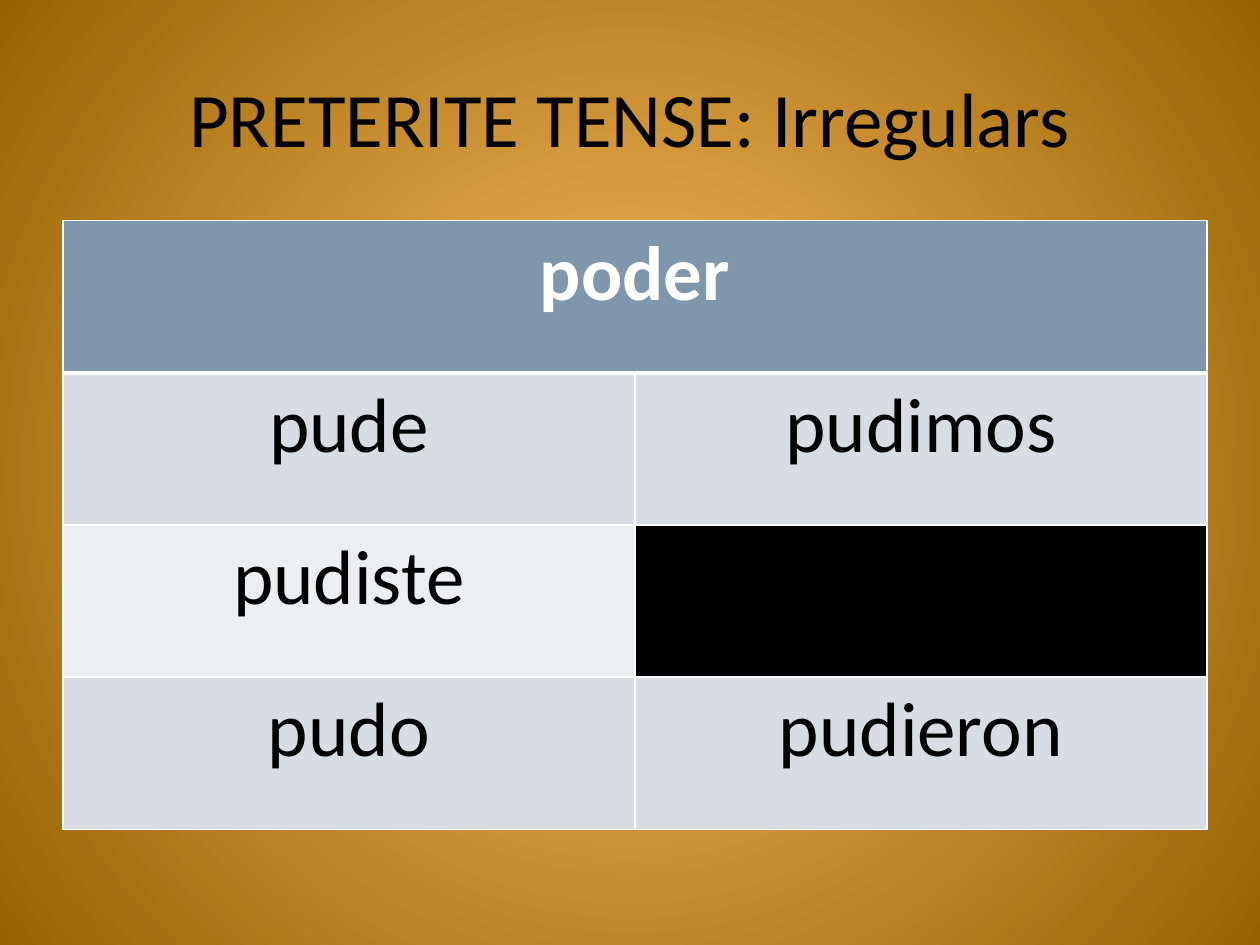
import dataclasses

import lxml.etree
import pptx
import pptx.dml.color
import pptx.enum.text
import pptx.oxml
import pptx.oxml.ns
import pptx.util

Cm = pptx.util.Cm
FONT = "Calibri"
COLORS = {
    "glow": "FFBA65",
    "edge": "956400",
    "header": "7E97AD",
    "band": "D8DDE3",
    "light": "ECEFF1",
    "black": "000000",
    "white": "FFFFFF",
}


@dataclasses.dataclass
class VerbForm:
    row: int
    column: int
    text: str
    fill: str
    color: str = "black"
    bold: bool = False


FORMS = [
    VerbForm(0, 0, "poder", "header", "white", True),
    VerbForm(0, 1, "", "header"),
    VerbForm(1, 0, "pude", "band"),
    VerbForm(1, 1, "pudimos", "band"),
    VerbForm(2, 0, "pudiste", "light"),
    VerbForm(2, 1, "", "black"),
    VerbForm(3, 0, "pudo", "band"),
    VerbForm(3, 1, "pudieron", "band"),
]


def rgb(name: str) -> pptx.dml.color.RGBColor:
    return pptx.dml.color.RGBColor.from_string(COLORS[name])


def format_paragraph(paragraph, color: str, bold: bool = False) -> None:
    paragraph.alignment = pptx.enum.text.PP_ALIGN.CENTER
    font = paragraph.font
    font.name, font.size, font.bold = FONT, pptx.util.Pt(44), bold
    font.color.rgb = rgb(color)


def paint_background(slide) -> None:
    fill = slide.background.fill
    fill.gradient()
    for stop, color in zip(fill.gradient_stops, ("glow", "edge")):
        stop.color.rgb = rgb(color)
    # Turn the linear gradient into a circular one around the centre
    gradient = slide.background._cSld.find(".//" + pptx.oxml.ns.qn("a:gradFill"))
    gradient.remove(gradient.find(pptx.oxml.ns.qn("a:lin")))
    path = lxml.etree.SubElement(gradient, pptx.oxml.ns.qn("a:path"), path="circle")
    lxml.etree.SubElement(path, pptx.oxml.ns.qn("a:fillToRect"),
                          {side: "50000" for side in "ltrb"})


def draw_borders(cell, row: int) -> None:
    # The rule between header and body is thicker than the others
    widths = {"L": 1, "R": 1, "T": 3 if row == 1 else 1, "B": 3 if row == 0 else 1}
    for side, width in widths.items():
        cell._tc.get_or_add_tcPr().append(pptx.oxml.parse_xml(
            f'<a:ln{side} {pptx.oxml.ns.nsdecls("a")} w="{pptx.util.Pt(width)}">'
            f'<a:solidFill><a:srgbClr val="{COLORS["white"]}"/></a:solidFill>'
            f'</a:ln{side}>'))


def draw_form(table, form: VerbForm) -> None:
    cell = table.cell(form.row, form.column)
    draw_borders(cell, form.row)
    cell.fill.solid()
    cell.fill.fore_color.rgb = rgb(form.fill)
    if form.text:
        cell.text = form.text
        format_paragraph(cell.text_frame.paragraphs[0], form.color, form.bold)


def main() -> None:
    presentation = pptx.Presentation()
    presentation.slide_width, presentation.slide_height = Cm(25.4), Cm(19.05)
    slide = presentation.slides.add_slide(presentation.slide_layouts[5])
    paint_background(slide)

    # Title
    title = slide.shapes.title
    title.left, title.top, title.width, title.height = (
        Cm(1.27), Cm(0.76), Cm(22.86), Cm(3.18))
    title.text_frame.text = "PRETERITE TENSE: Irregulars"
    title.text_frame.vertical_anchor = pptx.enum.text.MSO_ANCHOR.MIDDLE
    format_paragraph(title.text_frame.paragraphs[0], "black")

    # Conjugation table
    conjugation = slide.shapes.add_table(
        4, 2, Cm(1.27), Cm(4.45), Cm(23.06), Cm(12.27)).table
    conjugation.cell(0, 0).merge(conjugation.cell(0, 1))
    for form in FORMS:
        draw_form(conjugation, form)

    presentation.save("out.pptx")


if __name__ == "__main__":
    main()
